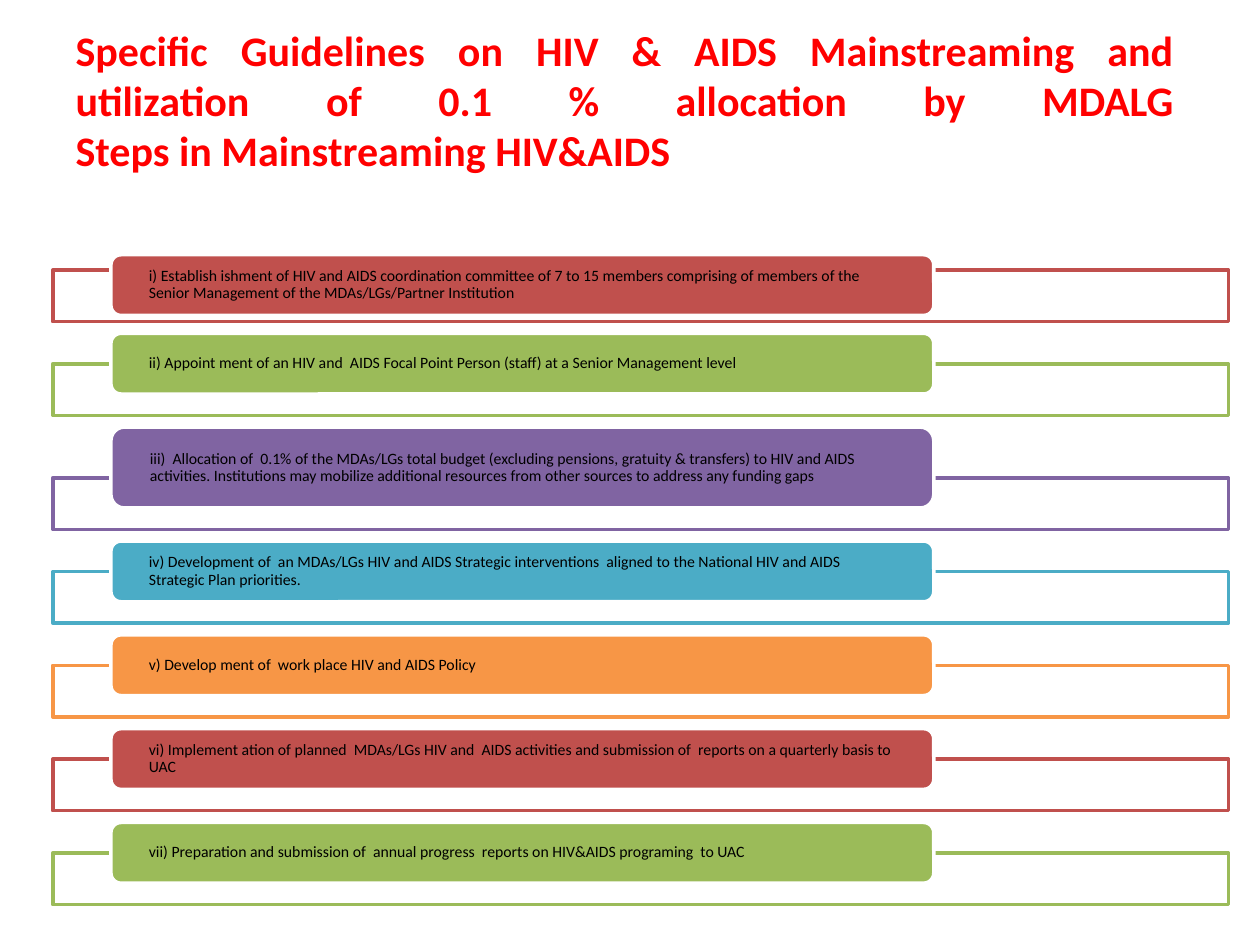
"""Builds a slide listing the seven steps in mainstreaming HIV and AIDS."""
from lxml import etree
from pptx import Presentation
from pptx.dml.color import RGBColor
from pptx.enum.shapes import MSO_SHAPE
from pptx.enum.text import MSO_ANCHOR, MSO_AUTO_SIZE, PP_ALIGN
from pptx.oxml.ns import qn
from pptx.util import Pt

RECTANGLE, ROUNDED = MSO_SHAPE.RECTANGLE, MSO_SHAPE.ROUNDED_RECTANGLE
MIDDLE, NO_AUTOFIT = MSO_ANCHOR.MIDDLE, MSO_AUTO_SIZE.NONE
LEFT, JUSTIFY = PP_ALIGN.LEFT, PP_ALIGN.JUSTIFY

WHITE = RGBColor(0xFF, 0xFF, 0xFF)
BLACK = RGBColor(0x00, 0x00, 0x00)
TITLE_RED = RGBColor(0xFF, 0x00, 0x00)
BRICK = RGBColor(0xC0, 0x50, 0x4D)
GREEN = RGBColor(0x9B, 0xBB, 0x59)
PURPLE = RGBColor(0x80, 0x64, 0xA2)
TEAL = RGBColor(0x4B, 0xAC, 0xC6)
ORANGE = RGBColor(0xF7, 0x96, 0x46)
STEP_COLORS = [BRICK, GREEN, PURPLE, TEAL, ORANGE]

FONT = "Calibri"
TITLE_LINES = [
    "Specific Guidelines on HIV & AIDS Mainstreaming and utilization of 0.1 % allocation by MDALG",
    "Steps in Mainstreaming HIV&AIDS ",
]

BAR_HEIGHT, TALL_BAR_HEIGHT = 34.7, 46.2
OVERLAP, FIRST_OVERLAP = 17.3, 26
STEPS = [
    ("i) Establish ishment of HIV and AIDS coordination committee of 7 to 15 members comprising "
     "of members of the Senior Management of the MDAs/LGs/Partner Institution",
     BAR_HEIGHT, FIRST_OVERLAP),
    ("ii) Appoint ment of an HIV and  AIDS Focal Point Person (staff) at a Senior Management level",
     BAR_HEIGHT, OVERLAP),
    ("iii)  Allocation of  0.1% of the MDAs/LGs total budget (excluding pensions, gratuity & "
     "transfers) to HIV and AIDS activities. Institutions may mobilize additional resources "
     "from other sources to address any funding gaps",
     TALL_BAR_HEIGHT, OVERLAP),
    ("iv) Development of  an MDAs/LGs HIV and AIDS Strategic interventions  aligned to the "
     "National HIV and AIDS Strategic Plan priorities.",
     BAR_HEIGHT, OVERLAP),
    ("v) Develop ment of  work place HIV and AIDS Policy", BAR_HEIGHT, OVERLAP),
    ("vi) Implement ation of planned  MDAs/LGs HIV and  AIDS activities and submission of  "
     "reports on a quarterly basis to UAC",
     BAR_HEIGHT, OVERLAP),
    ("vii) Preparation and submission of  annual progress  reports on HIV&AIDS programing  to UAC",
     BAR_HEIGHT, OVERLAP),
]

FIRST_TOP, GAP = 145.6, 6.7
FRAME_LEFT, FRAME_WIDTH, FRAME_HEIGHT = 30.2, 671.8, 29.5
BAR_LEFT, BAR_WIDTH, BAR_INSET = 63.4, 470.2, 20


def add_block(slide, kind, left, top, width, height, fill, line):
    block = slide.shapes.add_shape(kind, Pt(left), Pt(top), Pt(width), Pt(height))
    block.shadow.inherit = False
    block.fill.solid()
    block.fill.fore_color.rgb = fill
    block.line.color.rgb = line
    block.line.width = Pt(2)
    return block


def add_span(para, text, size, color, bold=False):
    span = para.add_run()
    span.text = text
    span.font.name = FONT
    span.font.size = Pt(size)
    span.font.bold = bold
    span.font.color.rgb = color


def add_title(slide):
    title = slide.shapes.title
    title.left, title.top, title.width, title.height = Pt(36), Pt(30), Pt(642), Pt(54)
    box = title.text_frame
    box.word_wrap = True
    box.auto_size = NO_AUTOFIT
    box.vertical_anchor = MIDDLE
    para = box.paragraphs[0]
    para.alignment = JUSTIFY
    for index, text in enumerate(TITLE_LINES):
        if index:
            para.add_line_break()
        add_span(para, text, 24, TITLE_RED, bold=True)


def add_step(slide, top, text, height, overlap, color):
    frame_top = top + height - overlap
    frame = add_block(slide, RECTANGLE, FRAME_LEFT, frame_top, FRAME_WIDTH, FRAME_HEIGHT, WHITE, color)
    tint = frame.fill._xPr.find(qn("a:solidFill"))[0]
    etree.SubElement(tint, qn("a:alpha"), val="90000")
    bar = add_block(slide, ROUNDED, BAR_LEFT, top, BAR_WIDTH, height, color, WHITE)
    box = bar.text_frame
    box.word_wrap = True
    box.vertical_anchor = MIDDLE
    box.margin_left = box.margin_right = Pt(BAR_INSET)
    box.margin_top = box.margin_bottom = Pt(0)
    para = box.paragraphs[0]
    para.alignment = LEFT
    para.line_spacing = 0.9
    add_span(para, text, 9, BLACK)
    return frame_top + FRAME_HEIGHT + GAP


def main():
    deck = Presentation()
    deck.slide_width, deck.slide_height = Pt(720), Pt(540)
    page = deck.slides.add_slide(deck.slide_layouts[5])
    add_title(page)
    top = FIRST_TOP
    for index, (text, height, overlap) in enumerate(STEPS):
        color = STEP_COLORS[index % len(STEP_COLORS)]
        top = add_step(page, top, text, height, overlap, color)
    deck.save("out.pptx")


if __name__ == "__main__":
    main()
